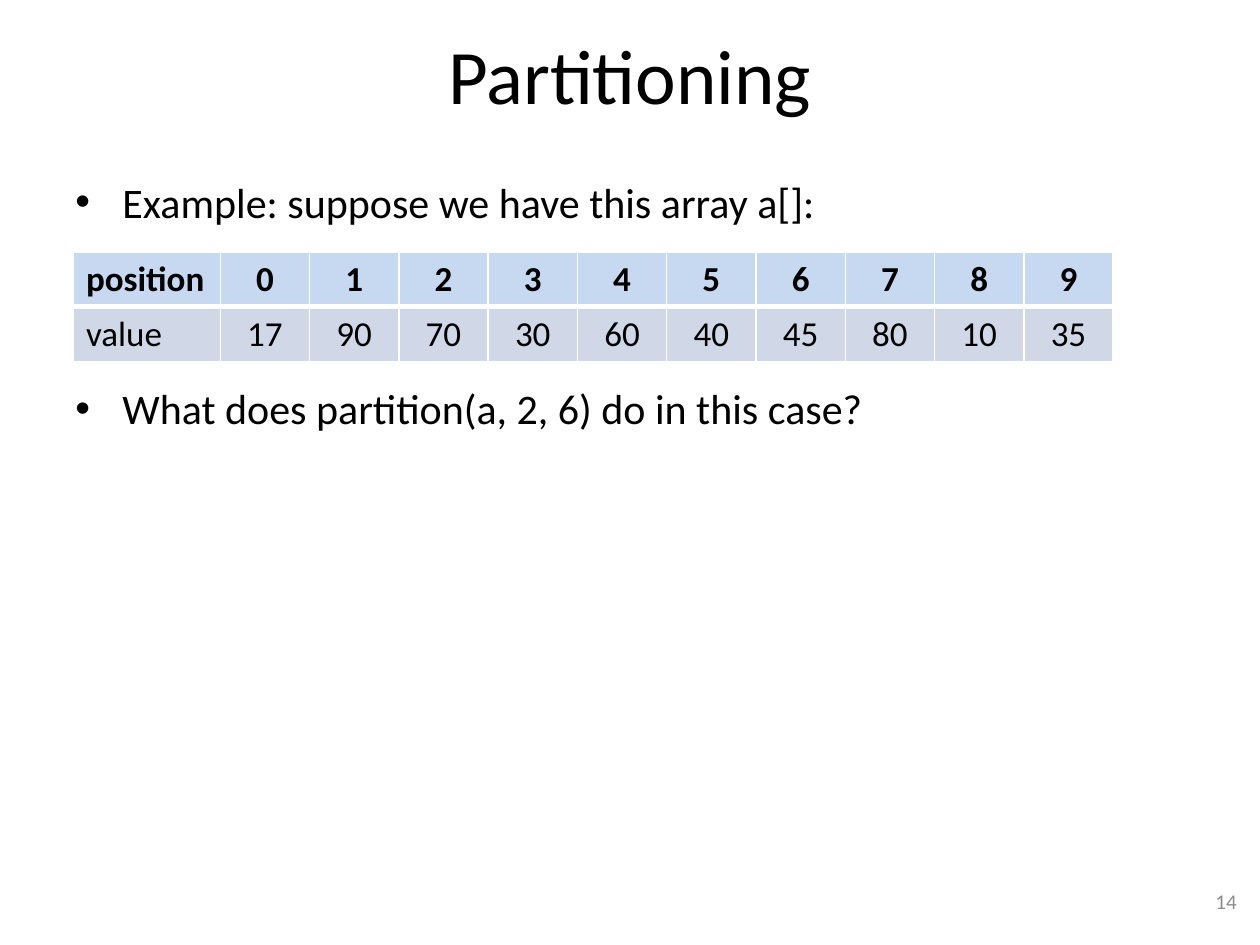
from lxml import etree
from pptx import Presentation
from pptx import util as u
from pptx.dml.color import RGBColor
from pptx.enum import text
from pptx.oxml import ns

FONT = "Calibri"
LEFT, MID, RIGHT = text.PP_ALIGN.LEFT, text.PP_ALIGN.CENTER, text.PP_ALIGN.RIGHT
TITLE = "Partitioning"
POINTS = ["Example: suppose we have this array a[]:",
          "What does partition(a, 2, 6) do in this case?"]
VALUES = [17, 90, 70, 30, 60, 40, 45, 80, 10, 35]
# label, cells, fill, bold, top and bottom border in points
ROWS = [("position", range(len(VALUES)), "C6D9F1", True, 1, 3),
        ("value", VALUES, "D0D8E8", False, 3, 1)]
GRID = {"left": 1.48, "top": 5.08, "label": 2.96, "col": 1.8, "row": 1.1}
GAP = u.Pt(89)  # room for the table between the two points
HANG = u.Cm(0.95)


def tint(code):
    return RGBColor.from_string(code)


def style(par, size, align=LEFT, color="000000", bold=False):
    par.alignment = align
    form = {"name": FONT, "size": u.Pt(size), "bold": bold}
    for key, val in form.items():
        setattr(par.font, key, val)
    par.font.color.rgb = tint(color)


def add_box(slide, place, lines, anchor):
    """Add a text box and return its paragraphs."""
    frame = slide.shapes.add_textbox(*map(u.Cm, place)).text_frame
    frame.word_wrap = True
    frame.vertical_anchor = anchor
    frame.text = "\n".join(lines)
    return frame.paragraphs


def add_bullet(par):
    props = par._p.get_or_add_pPr()
    props.set("marL", str(HANG))
    props.set("indent", str(-HANG))
    etree.SubElement(props, ns.qn("a:buFont"), typeface="Arial")
    etree.SubElement(props, ns.qn("a:buChar"), char="•")


def add_edges(cell, top, low):
    """Give a cell white borders; the side ones are one point wide."""
    props = cell._tc.get_or_add_tcPr()
    sides = {"L": 1, "R": 1, "T": top, "B": low}
    for spot, (side, width) in enumerate(sides.items()):
        line = etree.Element(ns.qn("a:ln" + side), w=str(u.Pt(width)))
        fill = etree.SubElement(line, ns.qn("a:solidFill"))
        etree.SubElement(fill, ns.qn("a:srgbClr"), val="FFFFFF")
        props.insert(spot, line)


def add_grid(slide):
    count = len(VALUES)
    width = GRID["label"] + count * GRID["col"]
    size = (GRID["left"], GRID["top"], width, len(ROWS) * GRID["row"])
    table = slide.shapes.add_table(len(ROWS), count + 1, *map(u.Cm, size)).table
    for num, col in enumerate(table.columns):
        col.width = u.Cm(GRID["col"] if num else GRID["label"])
    for row, (label, vals, fill, bold, top, low) in zip(table.rows, ROWS):
        row.height = u.Cm(GRID["row"])
        for num, (cell, val) in enumerate(zip(row.cells, [label, *vals])):
            cell.text = str(val)
            style(cell.text_frame.paragraphs[0], 20, MID if num else LEFT, bold=bold)
            cell.fill.solid()
            cell.fill.fore_color.rgb = tint(fill)
            add_edges(cell, top, low)


def main():
    deck = Presentation()
    deck.slide_width, deck.slide_height = u.Cm(25.4), u.Cm(19.05)
    slide = deck.slides.add_slide(deck.slide_layouts[6])
    center = text.MSO_ANCHOR.MIDDLE

    head = add_box(slide, (1.27, 0.21, 22.86, 2.54), [TITLE], center)
    style(head[0], 44, MID)

    body = add_box(slide, (1.27, 3.43, 22.86, 13.97), POINTS, text.MSO_ANCHOR.TOP)
    for par in body:
        add_bullet(par)
        style(par, 24)
    body[1].space_before = GAP

    page = add_box(slide, (19.26, 17.66, 5.92, 1.01), ["14"], center)
    style(page[0], 12, RIGHT, "8C8C8C")

    add_grid(slide)
    deck.save("out.pptx")


if __name__ == "__main__":
    main()
